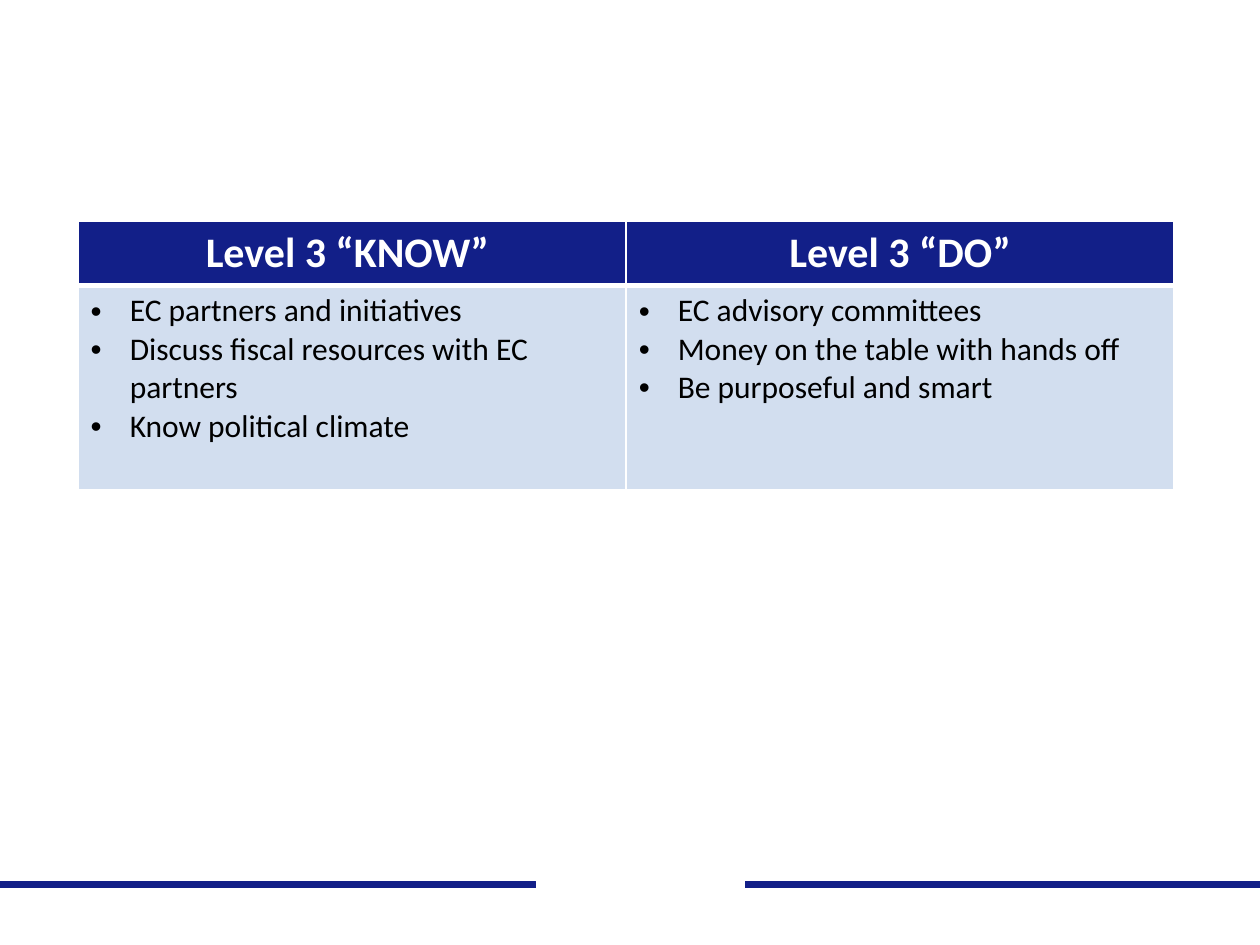
import dataclasses

import lxml.etree
import pptx
import pptx.dml.color
import pptx.enum.shapes
import pptx.enum.text
import pptx.oxml.ns
import pptx.util

Inches = pptx.util.Inches
Pt = pptx.util.Pt
qn = pptx.oxml.ns.qn

COLORS = {"navy": "121F88", "pale": "D2DEEF", "white": "FFFFFF", "black": "000000"}
FONT = "Calibri"


@dataclasses.dataclass
class Level:
    heading: str
    points: list[str]


@dataclasses.dataclass
class Rule:
    start: float
    end: float
    color: str


LEVELS = [
    Level("Level 3 “KNOW” ", [
        "EC partners and initiatives",
        "Discuss fiscal resources with EC partners",
        "Know political climate",
    ]),
    Level("Level 3 “DO”", [
        "EC advisory committees",
        "Money on the table with hands off",
        "Be purposeful and smart",
    ]),
]
FOOTER_RULES = [Rule(0, 10, "navy"), Rule(4.25, 5.91, "white")]
FOOTER_TOP = 7.02
COLUMN_WIDTH = 4.35
ROW_HEIGHTS = [0.5, 1.62]


def rgb(name: str) -> pptx.dml.color.RGBColor:
    return pptx.dml.color.RGBColor.from_string(COLORS[name])


def draw_rule(slide, rule: Rule) -> None:
    line = slide.shapes.add_connector(
        pptx.enum.shapes.MSO_CONNECTOR.STRAIGHT,
        Inches(rule.start), Inches(FOOTER_TOP), Inches(rule.end), Inches(FOOTER_TOP))
    line.line.color.rgb = rgb(rule.color)
    line.line.width = Pt(4.5)
    lxml.etree.SubElement(line._element.spPr, qn("a:effectLst"))


def style_cell(cell, fill: str, top: float, bottom: float) -> None:
    properties = cell._tc.get_or_add_tcPr()
    for side, width in (("L", 1), ("R", 1), ("T", top), ("B", bottom)):
        border = lxml.etree.SubElement(properties, qn(f"a:ln{side}"), w=str(Pt(width)))
        solid = lxml.etree.SubElement(border, qn("a:solidFill"))
        lxml.etree.SubElement(solid, qn("a:srgbClr"), val=COLORS["white"])
    cell.fill.solid()
    cell.fill.fore_color.rgb = rgb(fill)


def add_text(paragraph, text: str, size: float, color: str, bold: bool) -> None:
    run = paragraph.add_run()
    run.text = text
    run.font.name = FONT
    run.font.size = Pt(size)
    run.font.bold = bold
    run.font.color.rgb = rgb(color)


def add_bullet(paragraph) -> None:
    properties = paragraph._p.get_or_add_pPr()
    properties.set("marL", str(Inches(0.31)))
    properties.set("indent", str(Inches(-0.31)))
    lxml.etree.SubElement(properties, qn("a:buFont"), typeface="Arial")
    lxml.etree.SubElement(properties, qn("a:buChar"), char="•")


def fill_column(table, column: int, level: Level) -> None:
    heading, body = table.cell(0, column), table.cell(1, column)
    style_cell(heading, "navy", 1, 3)
    style_cell(body, "pale", 3, 1)
    title = heading.text_frame.paragraphs[0]
    title.alignment = pptx.enum.text.PP_ALIGN.CENTER
    add_text(title, level.heading, 24, "white", True)
    for index, point in enumerate(level.points):
        frame = body.text_frame
        paragraph = frame.add_paragraph() if index else frame.paragraphs[0]
        add_bullet(paragraph)
        add_text(paragraph, point, 18, "black", False)


def main() -> None:
    presentation = pptx.Presentation()
    presentation.slide_width = Inches(10)
    presentation.slide_height = Inches(7.5)
    slide = presentation.slides.add_slide(presentation.slide_layouts[6])

    for rule in FOOTER_RULES:
        draw_rule(slide, rule)

    levels_table = slide.shapes.add_table(
        len(ROW_HEIGHTS), len(LEVELS), Inches(0.62), Inches(1.76),
        Inches(COLUMN_WIDTH * len(LEVELS)), Inches(sum(ROW_HEIGHTS))).table
    for row, height in zip(levels_table.rows, ROW_HEIGHTS):
        row.height = Inches(height)
    for column, level in enumerate(LEVELS):
        levels_table.columns[column].width = Inches(COLUMN_WIDTH)
        fill_column(levels_table, column, level)

    presentation.save("out.pptx")


if __name__ == "__main__":
    main()
